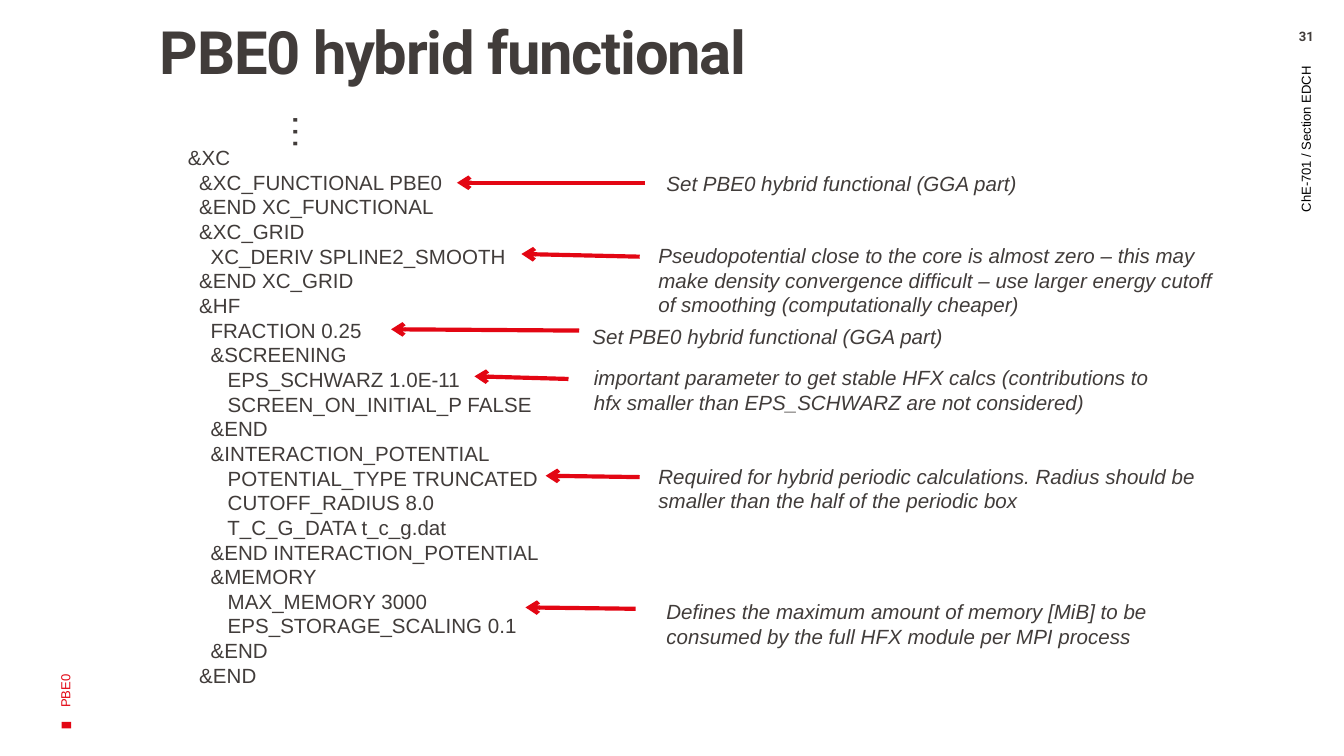
from typing import NamedTuple

from lxml.etree import SubElement
from pptx import Presentation
from pptx.dml.color import RGBColor
from pptx.enum.shapes import MSO_CONNECTOR, MSO_SHAPE
from pptx.enum.text import MSO_ANCHOR, MSO_AUTO_SIZE, PP_ALIGN
from pptx.oxml.ns import qn
from pptx.util import Inches, Pt

RED = RGBColor(0xE3, 0x06, 0x13)
DARK = RGBColor(0x41, 0x3C, 0x3A)
BLACK = RGBColor(0, 0, 0)


class Box(NamedTuple):
    left: float
    top: float
    width: float
    height: float


class Note(NamedTuple):
    text: str
    left: float
    top: float
    height: float
    start: tuple[float, float]
    end: tuple[float, float]


CODE = """\
    &XC
      &XC_FUNCTIONAL PBE0
      &END XC_FUNCTIONAL
      &XC_GRID
        XC_DERIV SPLINE2_SMOOTH
      &END XC_GRID
      &HF
        FRACTION 0.25
        &SCREENING
           EPS_SCHWARZ 1.0E-11
           SCREEN_ON_INITIAL_P FALSE
        &END
        &INTERACTION_POTENTIAL
           POTENTIAL_TYPE TRUNCATED
           CUTOFF_RADIUS 8.0
           T_C_G_DATA t_c_g.dat
        &END INTERACTION_POTENTIAL
        &MEMORY
           MAX_MEMORY 3000
           EPS_STORAGE_SCALING 0.1
        &END
      &END"""

HYBRID = "Set PBE0 hybrid functional (GGA part)"
NOTES = [
    Note(HYBRID, 4.86, 1.22, 0.29, (4.8, 1.36), (3.4, 1.36)),
    Note("Pseudopotential close to the core is almost zero – this may "
         "make density convergence difficult – use larger energy cutoff of "
         "smoothing (computationally cheaper)",
         4.8, 1.76, 0.66, (4.76, 1.91), (3.88, 1.89)),
    Note(HYBRID, 4.31, 2.36, 0.29, (4.31, 2.46), (2.91, 2.45)),
    Note("important parameter to get stable HFX calcs (contributions to hfx "
         "smaller than EPS_SCHWARZ are not considered)",
         4.32, 2.67, 0.47, (4.23, 2.82), (3.53, 2.8)),
    Note("Required for hybrid periodic calculations. Radius should be "
         "smaller than the half of the periodic box",
         4.8, 3.4, 0.47, (4.76, 3.55), (4.06, 3.54)),
    Note("Defines the maximum amount of memory [MiB] to be consumed by the "
         "full HFX module per MPI process",
         4.86, 4.41, 0.47, (4.73, 4.53), (3.91, 4.52)),
]


def place(shape, box: Box) -> None:
    shape.left, shape.top, shape.width, shape.height = map(Inches, box)


def write(shape, text: str, *, size: float = 11, font: str = "Arial",
          color: RGBColor = DARK, bold: bool = False, italic: bool = False,
          align: PP_ALIGN = PP_ALIGN.LEFT, anchor: MSO_ANCHOR = MSO_ANCHOR.TOP,
          inset: tuple = (0.1, 0.05, 0.1, 0.05), lead: float = 1,
          track: float = 0) -> None:
    """Put text in a shape, one paragraph a line, in a single format."""
    frame = shape.text_frame
    frame.word_wrap = True
    frame.auto_size = MSO_AUTO_SIZE.NONE
    frame.vertical_anchor = anchor
    (frame.margin_left, frame.margin_top,
     frame.margin_right, frame.margin_bottom) = map(Inches, inset)
    frame.text = text
    for para in frame.paragraphs:
        para.alignment = align
        para.line_spacing = lead
        for run in para.runs:
            style = run.font
            style.name, style.size = font, Pt(size)
            style.bold, style.italic = bold, italic
            style.color.rgb = color
            if track:
                run._r.get_or_add_rPr().set("spc", str(round(track * 100)))


def label(slide, text: str, box: Box, turn: float = 0, **style) -> None:
    shape = slide.shapes.add_textbox(*map(Inches, box))
    shape.rotation = turn
    write(shape, text, **style)


def arrow(slide, start: tuple[float, float], end: tuple[float, float]) -> None:
    link = slide.shapes.add_connector(
        MSO_CONNECTOR.STRAIGHT, *map(Inches, start + end))
    link.line.color.rgb = RED
    link.line.width = Pt(2.25)
    SubElement(link.line._get_or_add_ln(), qn("a:tailEnd"), type="arrow")
    SubElement(link._element.spPr, qn("a:effectLst"))


def main() -> None:
    # Widescreen, 16 to 9
    deck = Presentation()
    deck.slide_width = Inches(10)
    deck.slide_height = deck.slide_width * 9 // 16
    slide = deck.slides.add_slide(deck.slide_layouts[5])

    # Title
    title = slide.shapes.title
    place(title, Box(0.99, 0.21, 6.84, 0.52))
    write(title, "PBE0 hybrid functional", size=32, font="Roboto", bold=True,
          inset=(0.2, 0, 0.08, 0.05), lead=0.8, track=-0.7)

    # Margins: red marker, section, course and page number
    mark = slide.shapes.add_shape(
        MSO_SHAPE.RECTANGLE, *map(Inches, Box(0.47, 5.36, 0.05, 0.07)))
    mark.rotation = 270
    mark.shadow.inherit = False
    mark.fill.solid()
    mark.fill.fore_color.rgb = RED
    mark.line.fill.background()
    label(slide, "PBE0", Box(-1.34, 3.04, 3.65, 1), 270, size=7, color=RED,
          anchor=MSO_ANCHOR.MIDDLE)
    label(slide, "ChE-701 / Section EDCH", Box(7.78, 2.05, 3.87, 0.56), 270,
          size=7, color=BLACK, align=PP_ALIGN.RIGHT, anchor=MSO_ANCHOR.MIDDLE)
    label(slide, "31", Box(9.44, 0.21, 0.56, 0.18), size=7, font="Roboto",
          bold=True, align=PP_ALIGN.CENTER, inset=(0.1, 0, 0.1, 0))

    # Input listing
    label(slide, CODE, Box(1.13, 1.03, 4.37, 4.17))
    label(slide, "…", Box(2.01, 0.81, 0.56, 0.44), 90, size=20)

    # Remarks with arrows to the listing
    for note in NOTES:
        arrow(slide, note.start, note.end)
        label(slide, note.text, Box(note.left, note.top, 4.48, note.height),
              italic=True)

    deck.save("out.pptx")


if __name__ == "__main__":
    main()
